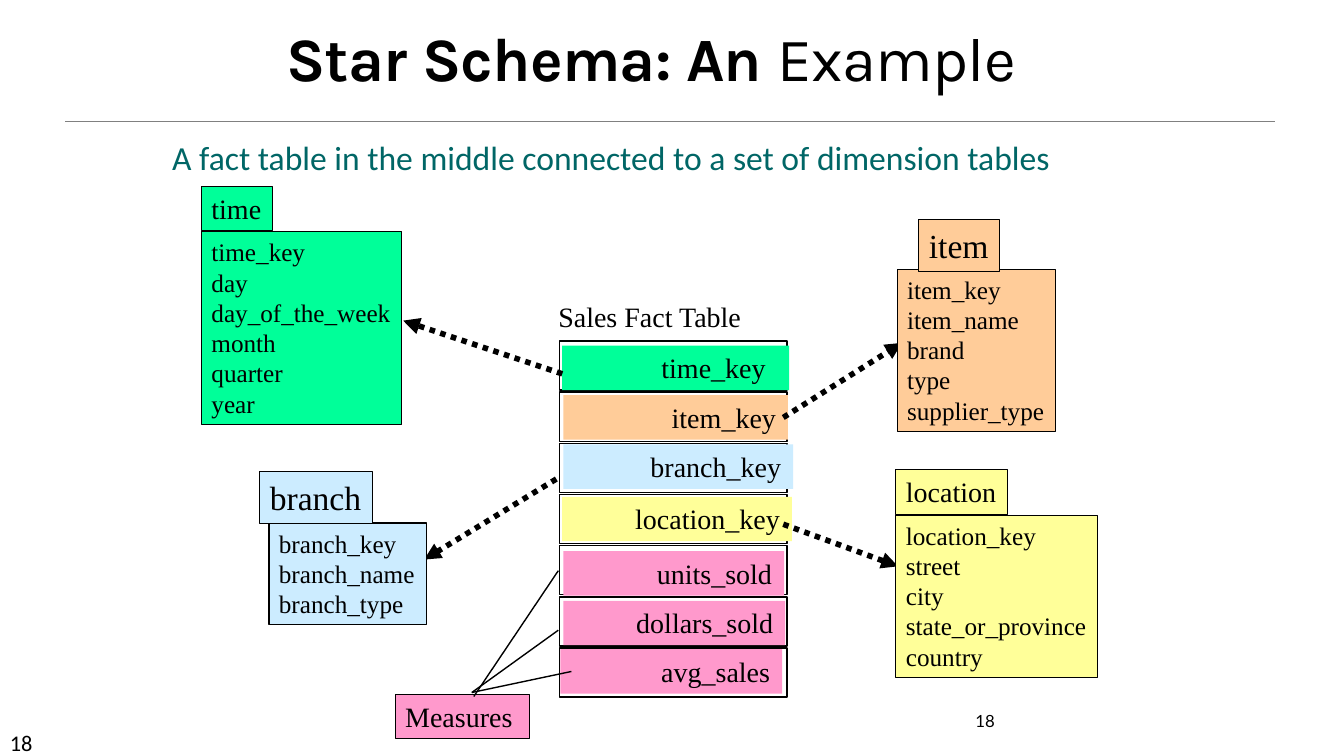
from dataclasses import dataclass

from lxml.etree import SubElement
from pptx import Presentation
from pptx.dml.color import RGBColor
from pptx.enum.dml import MSO_LINE_DASH_STYLE as Dash
from pptx.enum.shapes import MSO_CONNECTOR, MSO_SHAPE
from pptx.enum.text import MSO_ANCHOR as Anchor, MSO_AUTO_SIZE, PP_ALIGN as Align
from pptx.oxml.ns import qn
from pptx.util import Cm, Pt


@dataclass(frozen=True)
class Theme:
    black: str = "000000"
    gray: str = "808080"
    teal: str = "006666"
    green: str = "00FF99"
    orange: str = "FFCC99"
    blue: str = "CCECFF"
    yellow: str = "FFFF99"
    pink: str = "FF99CC"
    title_font: str = "Karla"
    body_font: str = "Calibri"
    number_font: str = "Lato"
    diagram_font: str = "Times New Roman"
    title_size: float = 44
    large: float = 24
    medium: float = 20
    small: float = 18
    page_size: float = 16
    number_size: float = 12


THEME = Theme()


@dataclass(frozen=True)
class Box:
    left: float
    top: float
    width: float
    height: float


@dataclass(frozen=True)
class Dimension:
    name: str
    name_size: float
    color: str
    header: Box
    body: Box
    fields: tuple[str, ...]


@dataclass(frozen=True)
class FactRow:
    field: str
    color: str
    band: Box
    right_inset: float = 0.3


@dataclass(frozen=True)
class Link:
    start: tuple[float, float]
    end: tuple[float, float]


DIMENSIONS = (
    Dimension("time", THEME.medium, THEME.green,
              Box(5.08, 4.7, 1.78, 1.12), Box(5.08, 5.84, 5.05, 4.85),
              ("time_key", "day", "day_of_the_week", "month", "quarter", "year")),
    Dimension("location", THEME.medium, THEME.yellow,
              Box(22.58, 11.84, 2.82, 1.12), Box(22.58, 12.98, 5.08, 4.09),
              ("location_key", "street", "city", "state_or_province", "country")),
    Dimension("item", THEME.large, THEME.orange,
              Box(23.16, 5.54, 2.03, 1.3), Box(22.61, 6.78, 3.99, 4.09),
              ("item_key", "item_name", "brand", "type", "supplier_type")),
    Dimension("branch", THEME.large, THEME.blue,
              Box(6.55, 11.89, 2.84, 1.3), Box(6.78, 13.18, 3.96, 2.57),
              ("branch_key", "branch_name", "branch_type")),
)

FACT_FRAME = Box(14.1, 8.59, 5.74, 1.24)
FACT_PITCH = 1.29
FACT_ROWS = (
    FactRow("time_key", THEME.green, Box(14.17, 8.71, 5.72, 1.12), 0.59),
    FactRow("item_key", THEME.orange, Box(14.2, 9.96, 5.66, 1.12)),
    FactRow("branch_key", THEME.blue, Box(14.2, 11.2, 5.79, 1.12)),
    FactRow("location_key", THEME.yellow, Box(14.17, 12.52, 5.79, 1.12)),
    FactRow("units_sold", THEME.pink, Box(14.2, 13.89, 5.56, 1.12)),
    FactRow("dollars_sold", THEME.pink, Box(14.2, 15.14, 5.59, 1.12)),
    FactRow("avg_sales", THEME.pink, Box(14.12, 16.36, 5.59, 1.12)),
)

MEASURE_LINES = (
    Link((11.94, 17.55), (14.07, 14.38)),
    Link((11.89, 17.45), (14.07, 15.88)),
    Link((11.89, 17.45), (14.4, 16.92)),
)
KEY_ARROWS = (
    Link((14.02, 12.07), (10.69, 14.1)),
    Link((14.17, 9.42), (10.16, 8.08)),
    Link((19.74, 13.21), (22.63, 14.27)),
    Link((19.74, 10.52), (22.73, 8.64)),
)


def emu(box: Box) -> tuple[Cm, Cm, Cm, Cm]:
    return Cm(box.left), Cm(box.top), Cm(box.width), Cm(box.height)


def write(paragraph, text: str, *, size: float = THEME.medium,
          font: str = THEME.diagram_font, color: str = THEME.black,
          bold: bool = False, align=Align.LEFT):
    """Append a formatted run to the paragraph and return it."""
    paragraph.alignment = align
    run = paragraph.add_run()
    run.text = text
    run.font.name, run.font.size, run.font.bold = font, Pt(size), bold
    run.font.color.rgb = RGBColor.from_string(color)
    return run


def add_rectangle(slide, box: Box, fill: str | None = None, line_width: float = 0):
    shape = slide.shapes.add_shape(MSO_SHAPE.RECTANGLE, *emu(box))
    shape.shadow.inherit = False
    if fill:
        shape.fill.solid()
        shape.fill.fore_color.rgb = RGBColor.from_string(fill)
    else:
        shape.fill.background()
    if line_width:
        shape.line.color.rgb = RGBColor.from_string(THEME.black)
        shape.line.width = Pt(line_width)
    else:
        shape.line.fill.background()
    shape.text_frame.word_wrap = False
    shape.text_frame.vertical_anchor = Anchor.TOP
    return shape


def add_label(slide, box: Box, text: str, **text_format) -> None:
    frame = slide.shapes.add_textbox(*emu(box)).text_frame
    frame.word_wrap = True
    write(frame.paragraphs[0], text, **text_format)


def add_line(slide, link: Link, width: float = 1, color: str = THEME.black):
    connector = slide.shapes.add_connector(
        MSO_CONNECTOR.STRAIGHT, *map(Cm, link.start + link.end))
    connector.line.color.rgb = RGBColor.from_string(color)
    connector.line.width = Pt(width)
    SubElement(connector._element.spPr, qn("a:effectLst"))
    return connector


def add_key_arrow(slide, link: Link) -> None:
    line = add_line(slide, link, width=4).line
    line.dash_style = Dash.ROUND_DOT  # stored as sysDot
    SubElement(line._get_or_add_ln(), qn("a:tailEnd"), type="triangle")


def add_title(slide) -> None:
    title = slide.shapes.title
    title.left, title.top, title.width, title.height = emu(Box(5.61, 0.38, 21.59, 2.13))
    frame = title.text_frame
    frame.auto_size = MSO_AUTO_SIZE.NONE
    frame.vertical_anchor = Anchor.BOTTOM
    paragraph = frame.paragraphs[0]
    paragraph.line_spacing = 0.85
    for text, bold in (("Star Schema: An ", True), ("Example", False)):
        run = write(paragraph, text, size=THEME.title_size, font=THEME.title_font,
                    bold=bold, align=Align.CENTER)
        run.font._element.set("spc", "-50")


def add_dimension(slide, dimension: Dimension) -> None:
    body = add_rectangle(slide, dimension.body, dimension.color, 0.75).text_frame
    for index, field in enumerate(dimension.fields):
        paragraph = body.add_paragraph() if index else body.paragraphs[0]
        write(paragraph, field, size=THEME.small)
    header = add_rectangle(slide, dimension.header, dimension.color, 0.75).text_frame
    write(header.paragraphs[0], dimension.name, size=dimension.name_size)


def add_fact_table(slide) -> None:
    add_label(slide, Box(13.82, 7.42, 5.16, 1.12), "Sales Fact Table")
    for index, row in enumerate(FACT_ROWS):
        top = FACT_FRAME.top + index * FACT_PITCH
        add_rectangle(slide, Box(FACT_FRAME.left, top, FACT_FRAME.width,
                                 FACT_FRAME.height), line_width=1)
        frame = add_rectangle(slide, row.band, row.color).text_frame
        frame.word_wrap = True
        frame.margin_right = Cm(row.right_inset)
        write(frame.paragraphs[0], row.field, align=Align.RIGHT)


def main() -> None:
    presentation = Presentation()
    presentation.slide_width, presentation.slide_height = Cm(33.87), Cm(19.05)
    slide = presentation.slides.add_slide(presentation.slide_layouts[5])
    add_line(slide, Link((1.65, 3.05), (32.13, 3.05)), width=0.5, color=THEME.gray)
    add_label(slide, Box(0, 18.24, 2.97, 0.76), "18",
              size=THEME.page_size, font=THEME.body_font)
    add_label(slide, Box(24.33, 17.78, 5.28, 1.27), "18",
              size=THEME.number_size, font=THEME.number_font)
    add_title(slide)
    add_fact_table(slide)
    measures = add_rectangle(slide, Box(9.96, 17.5, 3.38, 1.12), THEME.pink, 0.75)
    write(measures.text_frame.paragraphs[0], "Measures")
    measures.text_frame.word_wrap = True
    for link in MEASURE_LINES:
        add_line(slide, link)
    for link in KEY_ARROWS:
        add_key_arrow(slide, link)
    for dimension in DIMENSIONS:
        add_dimension(slide, dimension)
    add_label(slide, Box(4.09, 3.33, 25.65, 1.27),
              "A fact table in the middle connected to a set of dimension tables",
              size=THEME.large, font=THEME.body_font, color=THEME.teal)
    presentation.save("out.pptx")


if __name__ == "__main__":
    main()
